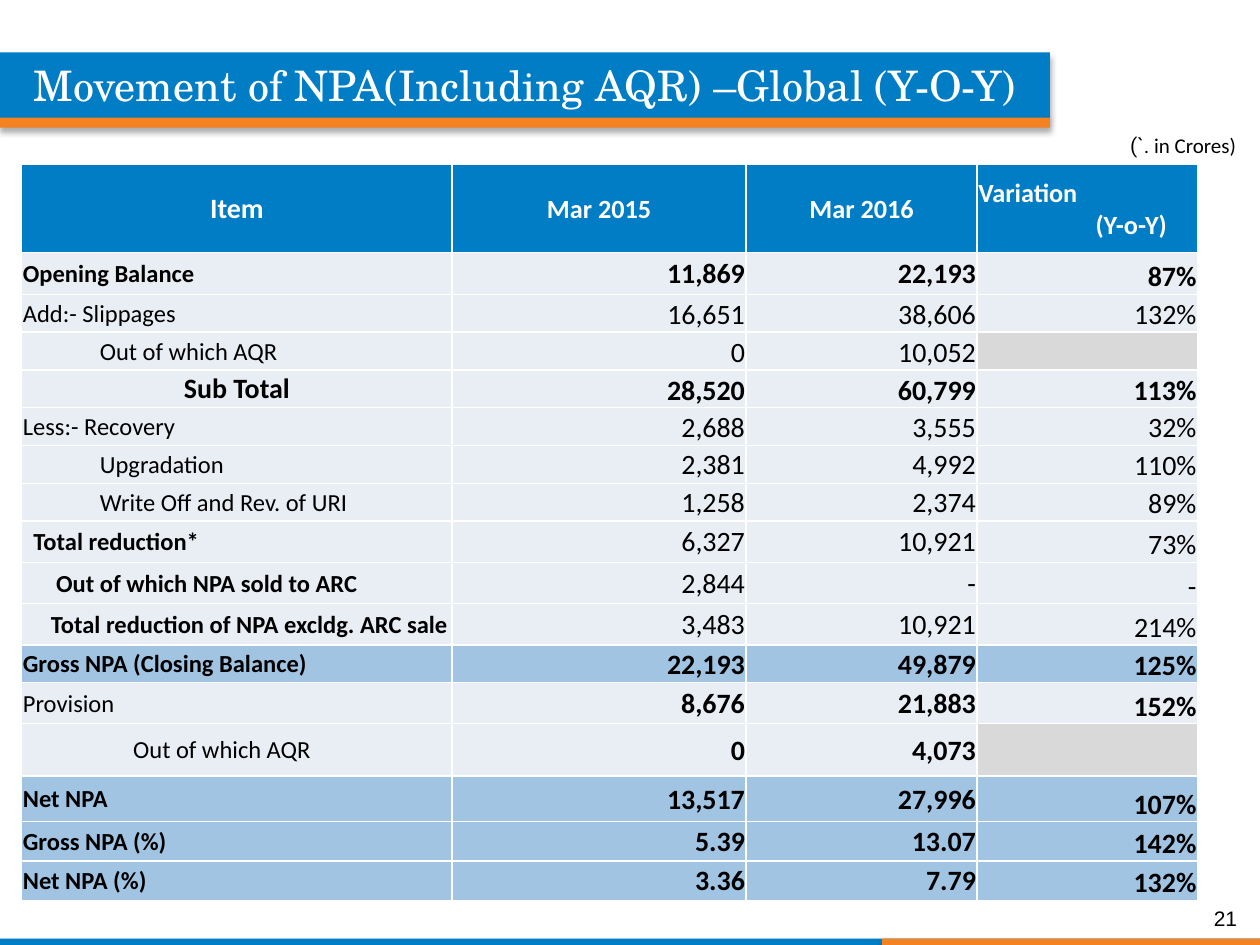
from lxml import etree
from pptx import Presentation
from pptx import util as u
from pptx.dml import color
from pptx.enum import shapes, text
from pptx.oxml import parse_xml
from pptx.oxml import ns

BLUE, ORANGE, WHITE, BLACK = "007DC5", "F58220", "FFFFFF", "000000"
PALE, HIGHLIGHT, GREY = "E9EDF4", "A1C4E3", "D9D9D9"
LEFT, CENTER, RIGHT = text.PP_ALIGN.LEFT, text.PP_ALIGN.CENTER, text.PP_ALIGN.RIGHT
MIDDLE, BOTTOM = text.MSO_ANCHOR.MIDDLE, text.MSO_ANCHOR.BOTTOM

BARS = [
    (0, 536.4, 720, 3.6, BLUE),
    (504, 536.4, 216, 3.6, ORANGE),
    (0, 30, 600, 37.5, BLUE),
    (0, 67.2, 600, 5.8, ORANGE),
]
COLUMN_WIDTHS = [246, 168, 132, 126]
HEADER_HEIGHT = 50.4
HEADERS = [("Item", 16), ("Mar 2015", 15), ("Mar 2016", 15)]
VARIATION = ["Variation", "(Y-o-Y)"]
VARIATION_INDENT = 67

# label, indent, label bold, values, values bold, value anchor, fill, height
ROWS = [
    ("Opening Balance", 0, True, ["11,869", "22,193", "87%"], True, MIDDLE, PALE, 23.8),
    ("Add:- Slippages", 0, False, ["16,651", "38,606", "132%"], False, BOTTOM, PALE, 21.6),
    ("Out of which AQR", 44, False, ["0", "10,052", ""], False, BOTTOM, PALE, 21.6),
    ("Sub Total", None, True, ["28,520", "60,799", "113%"], True, BOTTOM, PALE, 21.6),
    ("Less:- Recovery", 0, False, ["2,688", "3,555", "32%"], False, BOTTOM, PALE, 21.6),
    ("Upgradation", 44, False, ["2,381", "4,992", "110%"], False, MIDDLE, PALE, 21.6),
    ("Write Off and Rev. of URI", 44, False, ["1,258", "2,374", "89%"], False, MIDDLE, PALE, 21.6),
    ("Total reduction*", 6, True, ["6,327", "10,921", "73%"], False, MIDDLE, PALE, 23.6),
    ("Out of which NPA sold to ARC", 19, True, ["2,844", "-", "-"], False, MIDDLE, PALE, 23.6),
    ("Total reduction of NPA excldg. ARC sale", 16, True, ["3,483", "10,921", "214%"],
     False, MIDDLE, PALE, 23.6),
    ("Gross NPA (Closing Balance)", 0, True, ["22,193", "49,879", "125%"], True, MIDDLE, HIGHLIGHT, 21.6),
    ("Provision", 0, False, ["8,676", "21,883", "152%"], True, MIDDLE, PALE, 23.4),
    ("Out of which AQR", 63, False, ["0", "4,073", ""], True, MIDDLE, PALE, 30),
    ("Net NPA", 0, True, ["13,517", "27,996", "107%"], True, MIDDLE, HIGHLIGHT, 26),
    ("Gross NPA (%)", 0, True, ["5.39", "13.07", "142%"], True, MIDDLE, HIGHLIGHT, 22.6),
    ("Net NPA (%)", 0, True, ["3.36", "7.79", "132%"], True, MIDDLE, HIGHLIGHT, 22.4),
]


def rgb(value):
    return color.RGBColor.from_string(value)


def add_run(paragraph, words, size, font, ink, bold=False):
    run = paragraph.add_run()
    run.text = words
    run.font.size = u.Pt(size)
    run.font.name = font
    run.font.bold = bold
    run.font.color.rgb = rgb(ink)


def add_bar(slide, left, top, width, height, fill):
    shape = slide.shapes.add_shape(
        shapes.MSO_SHAPE.RECTANGLE, u.Pt(left), u.Pt(top), u.Pt(width), u.Pt(height))
    shape.fill.solid()
    shape.fill.fore_color.rgb = rgb(fill)
    shape.line.fill.background()
    shape._element.spPr.append(parse_xml(
        f'<a:effectLst {ns.nsdecls("a")}><a:outerShdw blurRad="{u.Pt(3.5)}" '
        f'dist="{u.Pt(2.2)}" dir="5400000" rotWithShape="0"><a:srgbClr val="{BLACK}">'
        '<a:alpha val="32000"/></a:srgbClr></a:outerShdw></a:effectLst>'))


def add_note(slide, left, top, width, height, runs, anchor=text.MSO_ANCHOR.TOP):
    frame = slide.shapes.add_textbox(
        u.Pt(left), u.Pt(top), u.Pt(width), u.Pt(height)).text_frame
    frame.word_wrap = True
    frame.vertical_anchor = anchor
    paragraph = frame.paragraphs[0]
    paragraph.alignment = RIGHT
    for words, font in runs:
        add_run(paragraph, words, 12, font, BLACK)


def format_cell(cell, fill, anchor, alignment):
    cell.margin_left = cell.margin_right = cell.margin_top = u.Pt(0.7)
    cell.margin_bottom = 0
    cell.vertical_anchor = anchor
    properties = cell._tc.get_or_add_tcPr()
    for side in ("lnL", "lnR", "lnT", "lnB"):
        properties.append(parse_xml(
            f'<a:{side} {ns.nsdecls("a")} w="{u.Pt(1)}"><a:solidFill>'
            f'<a:srgbClr val="{WHITE}"/></a:solidFill></a:{side}>'))
    cell.fill.solid()
    cell.fill.fore_color.rgb = rgb(fill)
    paragraph = cell.text_frame.paragraphs[0]
    paragraph.alignment = alignment
    return paragraph


def set_indent(paragraph, margin, first_line=0):
    properties = paragraph._p.get_or_add_pPr()
    properties.set("marL", str(u.Pt(margin)))
    properties.set("indent", str(u.Pt(first_line)))


def fill_header(table):
    for column, (words, size) in enumerate(HEADERS):
        paragraph = format_cell(table.cell(0, column), BLUE, MIDDLE, CENTER)
        add_run(paragraph, words, size, "Calibri", WHITE, True)
    paragraph = format_cell(table.cell(0, len(HEADERS)), BLUE, MIDDLE, LEFT)
    set_indent(paragraph, VARIATION_INDENT, -VARIATION_INDENT)
    add_run(paragraph, VARIATION[0], 15, "Calibri", WHITE, True)
    paragraph.add_line_break()
    add_run(paragraph, VARIATION[1], 15, "Calibri", WHITE, True)


def fill_row(table, index, label, indent, label_bold, values, bold, anchor, fill):
    centered = indent is None
    paragraph = format_cell(table.cell(index, 0), fill, MIDDLE, CENTER if centered else LEFT)
    set_indent(paragraph, indent or 0)
    add_run(paragraph, label, 16 if centered else 14, "Calibri", BLACK, label_bold)
    for column, value in enumerate(values, 1):
        last = column == len(values)
        paragraph = format_cell(table.cell(index, column), fill if value else GREY,
                                BOTTOM if last else anchor, RIGHT)
        if value:
            add_run(paragraph, value, 16, "Calibri", BLACK, bold)
        else:
            etree.SubElement(paragraph._p, ns.qn("a:endParaRPr"), sz="1400")


def main():
    presentation = Presentation()
    presentation.slide_width, presentation.slide_height = u.Pt(720), u.Pt(540)
    slide = presentation.slides.add_slide(presentation.slide_layouts[5])
    for bar in BARS:
        add_bar(slide, *bar)

    title = slide.shapes.title
    title.left, title.top, title.width, title.height = map(u.Pt, (12, 30, 582, 36.4))
    slide.shapes._spTree.append(title._element)
    frame = title.text_frame
    frame.auto_size = text.MSO_AUTO_SIZE.NONE
    frame.word_wrap = True
    frame.vertical_anchor = MIDDLE
    frame.paragraphs[0].alignment = LEFT
    add_run(frame.paragraphs[0], "Movement of NPA(Including AQR) –Global (Y-O-Y)",
            24, "TeX Gyre Schola", WHITE)

    add_note(slide, 631.4, 72, 82, 21.8, [("(`.", "Roboto"), (" in Crores)", "Calibri")])
    add_note(slide, 546, 510, 168, 28.8, [("21", "Arial")], MIDDLE)

    heights = [HEADER_HEIGHT] + [row[-1] for row in ROWS]
    table = slide.shapes.add_table(
        len(heights), len(COLUMN_WIDTHS), u.Pt(12.4), u.Pt(94),
        u.Pt(sum(COLUMN_WIDTHS)), u.Pt(sum(heights))).table
    for column, width in zip(table.columns, COLUMN_WIDTHS):
        column.width = u.Pt(width)
    for row, height in zip(table.rows, heights):
        row.height = u.Pt(height)
    fill_header(table)
    for index, row in enumerate(ROWS, 1):
        fill_row(table, index, *row[:-1])
    presentation.save("out.pptx")


if __name__ == "__main__":
    main()
